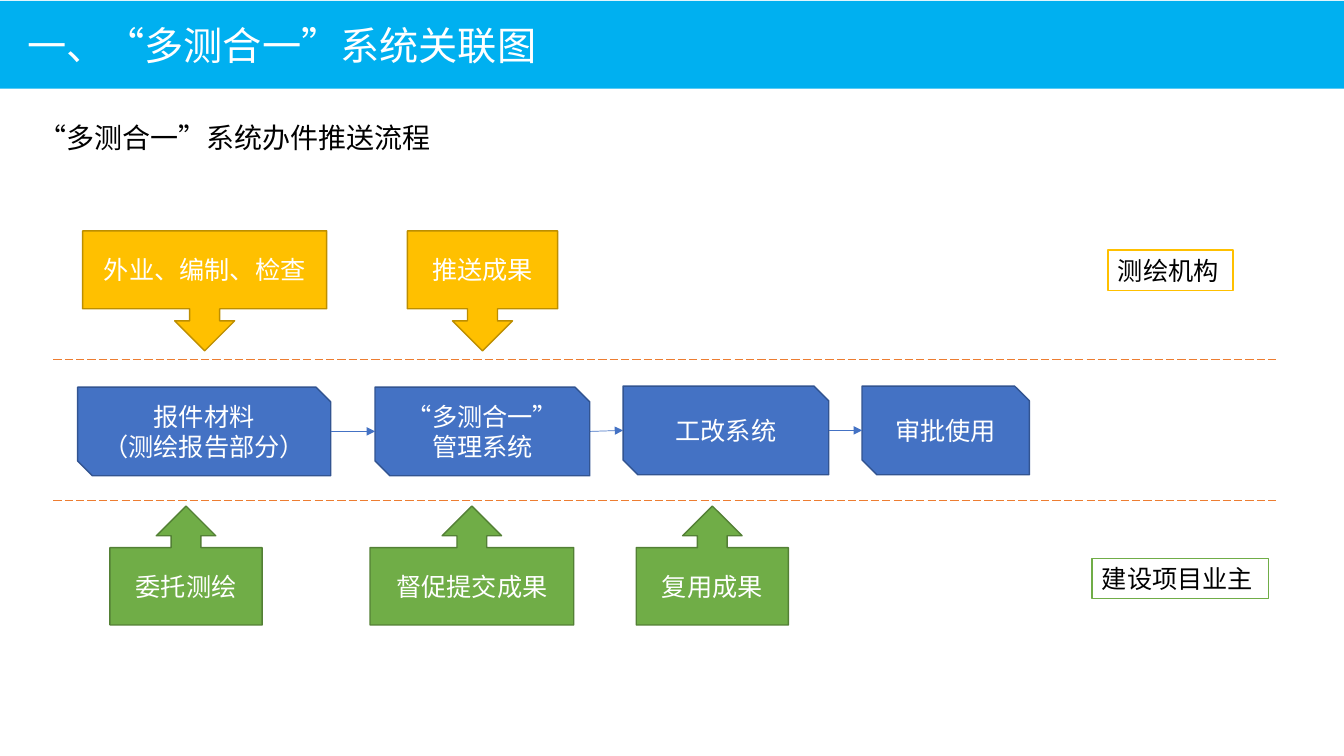
import pptx
import pptx.dml.color
import pptx.enum.dml
import pptx.enum.shapes
import pptx.enum.text
import pptx.oxml
import pptx.oxml.ns
import pptx.util
from dataclasses import dataclass
from typing import Any

Inches = pptx.util.Inches
RGBColor = pptx.dml.color.RGBColor
Kind = pptx.enum.shapes.MSO_SHAPE
Link = pptx.enum.shapes.MSO_CONNECTOR
Align = pptx.enum.text.PP_ALIGN
Anchor = pptx.enum.text.MSO_ANCHOR
Fit = pptx.enum.text.MSO_AUTO_SIZE

FONT = "Noto Sans CJK SC"
WHITE = RGBColor(0xFF, 0xFF, 0xFF)
BLACK = RGBColor(0x00, 0x00, 0x00)
SKY = RGBColor(0x00, 0xB0, 0xF0)
BLUE = RGBColor(0x44, 0x72, 0xC4)
NAVY = RGBColor(0x32, 0x54, 0x91)
GREEN = RGBColor(0x70, 0xAD, 0x47)
MOSS = RGBColor(0x53, 0x80, 0x35)
GOLD = RGBColor(0xFF, 0xC0, 0x00)
BROWN = RGBColor(0xBD, 0x8E, 0x00)
ORANGE = RGBColor(0xED, 0x7D, 0x31)


@dataclass(frozen=True)
class Look:
    kind: Any
    fill: RGBColor
    line: RGBColor
    ink: RGBColor
    high: float
    align: Any = Align.CENTER
    fit: Any = Fit.NONE


@dataclass(frozen=True)
class Box:
    text: str
    left: float
    top: float
    wide: float
    look: Look


STEP = Look(Kind.SNIP_2_DIAG_RECTANGLE, BLUE, NAVY, WHITE, 0.88)
DOWN = Look(Kind.DOWN_ARROW_CALLOUT, GOLD, BROWN, WHITE, 1.19)
UP = Look(Kind.UP_ARROW_CALLOUT, GREEN, MOSS, WHITE, 1.18)
AGENT = Look(Kind.RECTANGLE, WHITE, GOLD, BLACK, 0.4, Align.LEFT, Fit.SHAPE_TO_FIT_TEXT)
OWNER = Look(Kind.RECTANGLE, WHITE, GREEN, BLACK, 0.4, Align.LEFT, Fit.SHAPE_TO_FIT_TEXT)

STEPS = [
    Box("报件材料\n（测绘报告部分）", 0.77, 3.84, 2.51, STEP),
    Box("“多测合一”\n管理系统", 3.72, 3.84, 2.13, STEP),
    Box("工改系统", 6.18, 3.83, 2.04, STEP),
    Box("审批使用", 8.55, 3.83, 1.66, STEP),
]
NOTES = [
    Box("外业、编制、检查", 0.82, 2.29, 2.42, DOWN),
    Box("推送成果", 4.04, 2.29, 1.49, DOWN),
    Box("委托测绘", 1.09, 5.02, 1.51, UP),
    Box("督促提交成果", 3.67, 5.02, 2.02, UP),
    Box("复用成果", 6.31, 5.02, 1.51, UP),
    Box("测绘机构", 10.99, 2.48, 1.24, AGENT),
    Box("建设项目业主", 10.83, 5.54, 1.75, OWNER),
]


def put(item: Any, values: dict[str, Any]) -> None:
    for name, value in values.items():
        setattr(item, name, value)


def place(shape: Any, left: float, top: float, wide: float, high: float) -> None:
    put(shape, {"left": Inches(left), "top": Inches(top),
                "width": Inches(wide), "height": Inches(high)})


def write(shape: Any, text: str, size: float, ink: RGBColor, align: Any,
          frame: dict[str, Any]) -> None:
    body = shape.text_frame
    body.text = text
    put(body, {"word_wrap": True, **frame})
    for para in body.paragraphs:
        para.alignment = align
        for run in para.runs:
            put(run.font, {"name": FONT, "size": pptx.util.Pt(size)})
            run.font.color.rgb = ink
            props = run.font._element
            props.set("lang", "zh-CN")
            east = pptx.oxml.parse_xml(
                f'<a:ea {pptx.oxml.ns.nsdecls("a")} typeface="{FONT}"/>')
            props.append(east)


def paint(shape: Any, fill: RGBColor) -> None:
    shape.fill.solid()
    shape.fill.fore_color.rgb = fill


def draw(slide: Any, box: Box) -> Any:
    look = box.look
    shape = slide.shapes.add_shape(
        look.kind, *map(Inches, (box.left, box.top, box.wide, look.high)))
    shape.shadow.inherit = False
    paint(shape, look.fill)
    shape.line.color.rgb = look.line
    shape.line.width = pptx.util.Pt(1)
    anchor = Anchor.TOP if look.fit == Fit.SHAPE_TO_FIT_TEXT else Anchor.MIDDLE
    write(shape, box.text, 18, look.ink, look.align,
          {"vertical_anchor": anchor, "auto_size": look.fit})
    return shape


def rule(slide: Any, kind: Any, ends: tuple[int, ...], ink: RGBColor, width: float) -> Any:
    line = slide.shapes.add_connector(kind, *ends)
    line.line.color.rgb = ink
    line.line.width = pptx.util.Pt(width)
    line._element.spPr.append(
        pptx.oxml.parse_xml(f'<a:effectLst {pptx.oxml.ns.nsdecls("a")}/>'))
    return line


def join(slide: Any, first: Any, last: Any, kind: Any) -> None:
    start = (first.left + first.width, first.top + first.height // 2)
    end = (last.left, last.top + last.height // 2)
    line = rule(slide, kind, start + end, BLUE, 0.5)
    line.begin_connect(first, 0)
    line.end_connect(last, 2)
    put(line, {"begin_x": start[0], "begin_y": start[1],
               "end_x": end[0], "end_y": end[1]})
    line.line._get_or_add_ln().append(pptx.oxml.parse_xml(
        f'<a:tailEnd {pptx.oxml.ns.nsdecls("a")} type="triangle"/>'))


def main() -> None:
    deck = pptx.Presentation()
    put(deck, {"slide_width": Inches(13.33), "slide_height": Inches(7.5)})
    slide = deck.slides.add_slide(deck.slide_layouts[5])

    title = slide.shapes.title
    place(title, 0, 0.01, 13.33, 0.87)
    paint(title, SKY)
    write(title, "一、“多测合一”系统关联图", 28, WHITE, Align.LEFT,
          {"vertical_anchor": Anchor.MIDDLE, "auto_size": Fit.NONE,
           "margin_left": Inches(0.27)})

    head = slide.shapes.add_textbox(*map(Inches, (0.28, 1.15, 9.51, 0.44)))
    write(head, "“多测合一”系统办件推送流程", 20, BLACK, Align.LEFT,
          {"auto_size": Fit.SHAPE_TO_FIT_TEXT})

    steps = [draw(slide, box) for box in STEPS]
    for spot, (first, last) in enumerate(zip(steps, steps[1:])):
        join(slide, first, last, Link.STRAIGHT if spot else Link.ELBOW)
    for box in NOTES:
        draw(slide, box)
    for top in (3.57, 4.97):
        ends = tuple(map(Inches, (0.53, top, 12.68, top)))
        line = rule(slide, Link.STRAIGHT, ends, ORANGE, 0.75)
        line.line.dash_style = pptx.enum.dml.MSO_LINE.LONG_DASH

    deck.save("out.pptx")


if __name__ == "__main__":
    main()
